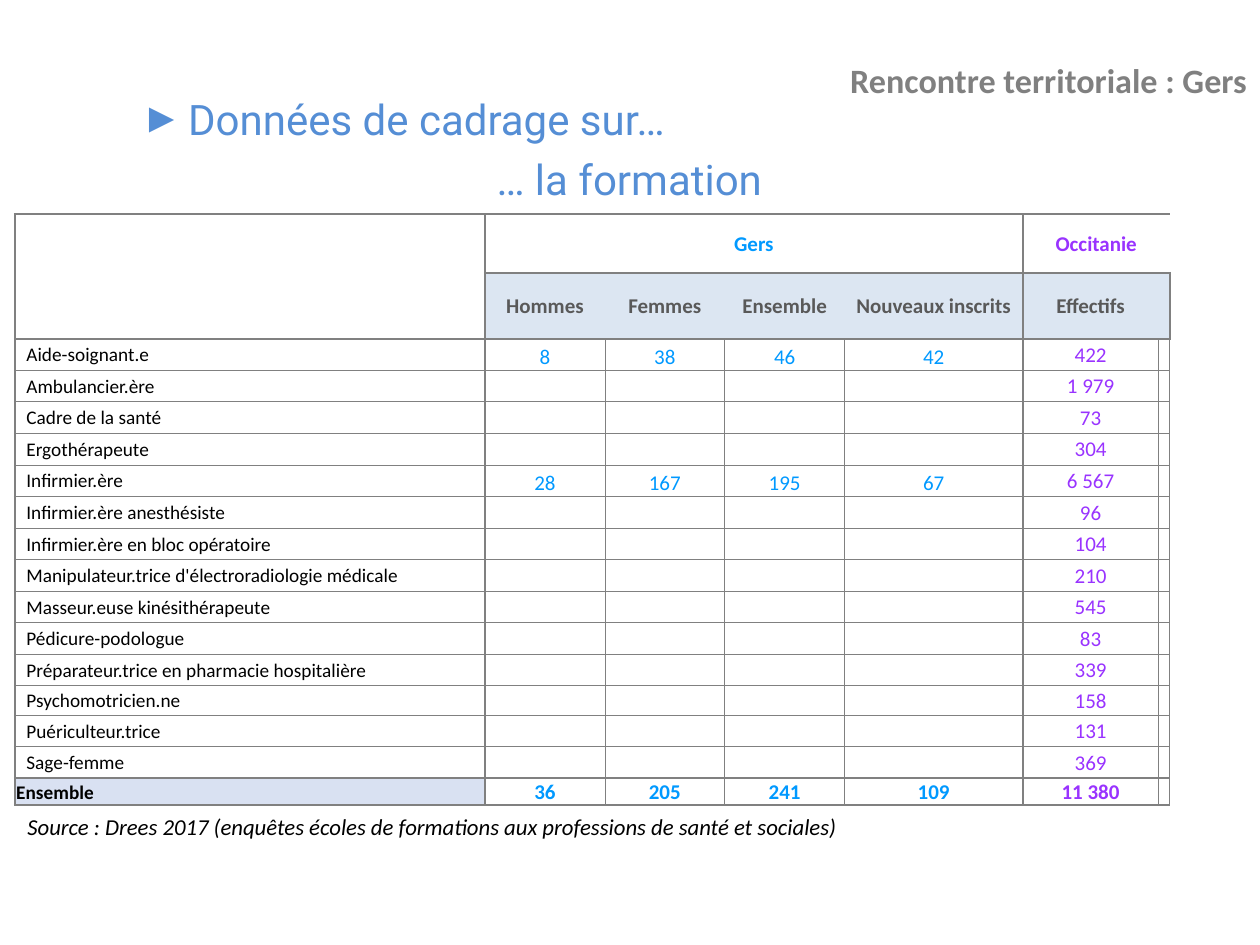
from lxml import etree
from pptx import Presentation
from pptx import util as u
from pptx.dml import color
from pptx.enum import text
from pptx.oxml import ns

Pt = u.Pt
COLORS = {"blue": "558ED5", "gray": "808080", "gers": "0099FF", "occitanie": "9933FF",
          "header": "595959", "header_fill": "DCE6F2", "total_fill": "D9E1F2",
          "white": "FFFFFF", "black": "000000"}
LEFT, CENTER, RIGHT = text.PP_ALIGN.LEFT, text.PP_ALIGN.CENTER, text.PP_ALIGN.RIGHT
MIDDLE, BOTTOM = text.MSO_ANCHOR.MIDDLE, text.MSO_ANCHOR.BOTTOM


def add_run(paragraph, words, size, shade, align=LEFT, font="Calibri", bold=False, italic=False):
    paragraph.alignment = align
    run = paragraph.add_run()
    run.text = words
    run.font.name, run.font.size = font, Pt(size)
    run.font.bold, run.font.italic = bold, italic
    run.font.color.rgb = color.RGBColor.from_string(COLORS[shade])


def add_box(left, top, width, height):
    frame = slide.shapes.add_textbox(Pt(left), Pt(top), Pt(width), Pt(height)).text_frame
    frame.word_wrap = True
    return frame


presentation = Presentation()
presentation.slide_width, presentation.slide_height = Pt(720), Pt(540)
slide = presentation.slides.add_slide(presentation.slide_layouts[6])

# Page heading
heading = add_box(127.4, 0, 592.6, 67)
heading.vertical_anchor = BOTTOM
heading.margin_bottom = Pt(9.6)
add_run(heading.paragraphs[0], "Rencontre territoriale : Gers", 19.5, "gray", RIGHT, bold=True)

# Slide title, bulleted on its first line
title = add_box(73.4, 49.7, 572.4, 67)
first, second = title.paragraphs[0], title.add_paragraph()
add_run(first, "Données de cadrage sur…", 24, "blue", font="Roboto")
add_run(second, "… la formation", 24, "blue", CENTER, font="Roboto")
for paragraph in (first, second):
    paragraph.space_before = Pt(5.6)
properties = first._p.get_or_add_pPr()
properties.set("marL", str(Pt(27)))
properties.set("indent", str(-Pt(27)))
etree.SubElement(properties, ns.qn("a:buFont")).set("typeface", "Arial")
etree.SubElement(properties, ns.qn("a:buChar")).set("char", "►")

# Source line
source = add_box(8.6, 460.8, 499, 34.6)
source.paragraphs[0].space_before = Pt(3)
add_run(source.paragraphs[0],
        "Source : Drees 2017 (enquêtes écoles de formations aux professions de santé et sociales)",
        13, "black", italic=True)

# Table contents: label, four Gers columns, Occitanie, narrow last column
BLANK = [""] * 4
ROWS = [
    ["", "Gers", "", "", "", "Occitanie", ""],
    ["", "Hommes", "Femmes", "Ensemble", "Nouveaux inscrits", "Effectifs", ""],
    ["Aide-soignant.e", "8", "38", "46", "42", "422", ""],
    ["Ambulancier.ère", *BLANK, "1 979", ""],
    ["Cadre de la santé", *BLANK, "73", ""],
    ["Ergothérapeute", *BLANK, "304", ""],
    ["Infirmier.ère", "28", "167", "195", "67", "6 567", ""],
    ["Infirmier.ère anesthésiste", *BLANK, "96", ""],
    ["Infirmier.ère en bloc opératoire", *BLANK, "104", ""],
    ["Manipulateur.trice d'électroradiologie médicale", *BLANK, "210", ""],
    ["Masseur.euse kinésithérapeute", *BLANK, "545", ""],
    ["Pédicure-podologue", *BLANK, "83", ""],
    ["Préparateur.trice en pharmacie hospitalière", *BLANK, "339", ""],
    ["Psychomotricien.ne", *BLANK, "158", ""],
    ["Puériculteur.trice", *BLANK, "131", ""],
    ["Sage-femme", *BLANK, "369", ""],
    ["Ensemble", "36", "205", "241", "109", "11 380", ""],
]
TOTAL = len(ROWS) - 1
WIDTHS = [268.6, 68.5, 68.5, 68.5, 101.8, 77.6, 6.4]
HEIGHTS = [33.6, 37.6] + [18.05] * 11 + [16.8] + [18.05] * 2 + [15.5]

# Line widths at each column edge, and at each row edge (label column, other columns)
HEADER_EDGES = [1.5, 1.5, 0, 0, 0, 1.5, 0, 1.5]
BODY_EDGES = [1.5, 1.5, 0.5, 0.5, 0.5, 1.5, 0.5, 1]
ROW_EDGES = [(1.5, 1.5), (0, 1.5), (1.5, 1)] + [(0.5, 0.5)] * 13 + [(1.5, 1.5)] * 2

frame = slide.shapes.add_table(len(ROWS), len(WIDTHS), Pt(8.6), Pt(122.4),
                               Pt(sum(WIDTHS)), Pt(sum(HEIGHTS)))
table = frame.table
table.first_row = table.horz_banding = False
table._tbl.tblPr.find(ns.qn("a:tableStyleId")).text = "{2D5ABB26-0587-4C30-8999-92F81FD0307C}"
for column, width in zip(table.columns, WIDTHS):
    column.width = Pt(width)
for row, height in zip(table.rows, HEIGHTS):
    row.height = Pt(height)
table.cell(0, 1).merge(table.cell(0, 4))
table.cell(0, 5).merge(table.cell(0, 6))

for r, values in enumerate(ROWS):
    for c, words in enumerate(values):
        cell = table.cell(r, c)
        cell.margin_left = cell.margin_right = cell.margin_top = Pt(0.7)
        cell.margin_bottom = 0
        is_number = r > 1 and 1 <= c <= 4
        cell.vertical_anchor = BOTTOM if is_number else MIDDLE

        # Text
        paragraph = cell.text_frame.paragraphs[0]
        if not words:
            paragraph._p.get_or_add_endParaRPr().set("sz", "1100")
        elif c == 0:
            add_run(paragraph, words, 11, "black", bold=r == TOTAL)
            if r < TOTAL:
                paragraph._p.get_or_add_pPr().set("marL", str(Pt(5.8)))
        else:
            shade = "header" if r == 1 else "occitanie" if c == 5 else "gers"
            add_run(paragraph, words, 12, shade, CENTER, bold=r in (0, 1, TOTAL))

        # Borders come before the fill in the cell properties
        edges = HEADER_EDGES if r < 2 else BODY_EDGES
        other = int(c > 0)
        sides = {"L": edges[c], "R": edges[c + 1],
                 "T": ROW_EDGES[r][other], "B": ROW_EDGES[r + 1][other]}
        for side, width in sides.items():
            line = etree.SubElement(cell._tc.get_or_add_tcPr(), ns.qn(f"a:ln{side}"))
            line.set("w", str(Pt(width)))
            if width:
                solid = etree.SubElement(line, ns.qn("a:solidFill"))
                etree.SubElement(solid, ns.qn("a:srgbClr")).set("val", COLORS["gray"])
            else:
                etree.SubElement(line, ns.qn("a:noFill"))

        # Fill
        fill = {(0, 5): "white", (TOTAL, 0): "total_fill"}.get((r, c))
        if r == 1 and c > 0:
            fill = "header_fill"
        if fill:
            cell.fill.solid()
            cell.fill.fore_color.rgb = color.RGBColor.from_string(COLORS[fill])
        else:
            cell.fill.background()

presentation.save("out.pptx")
